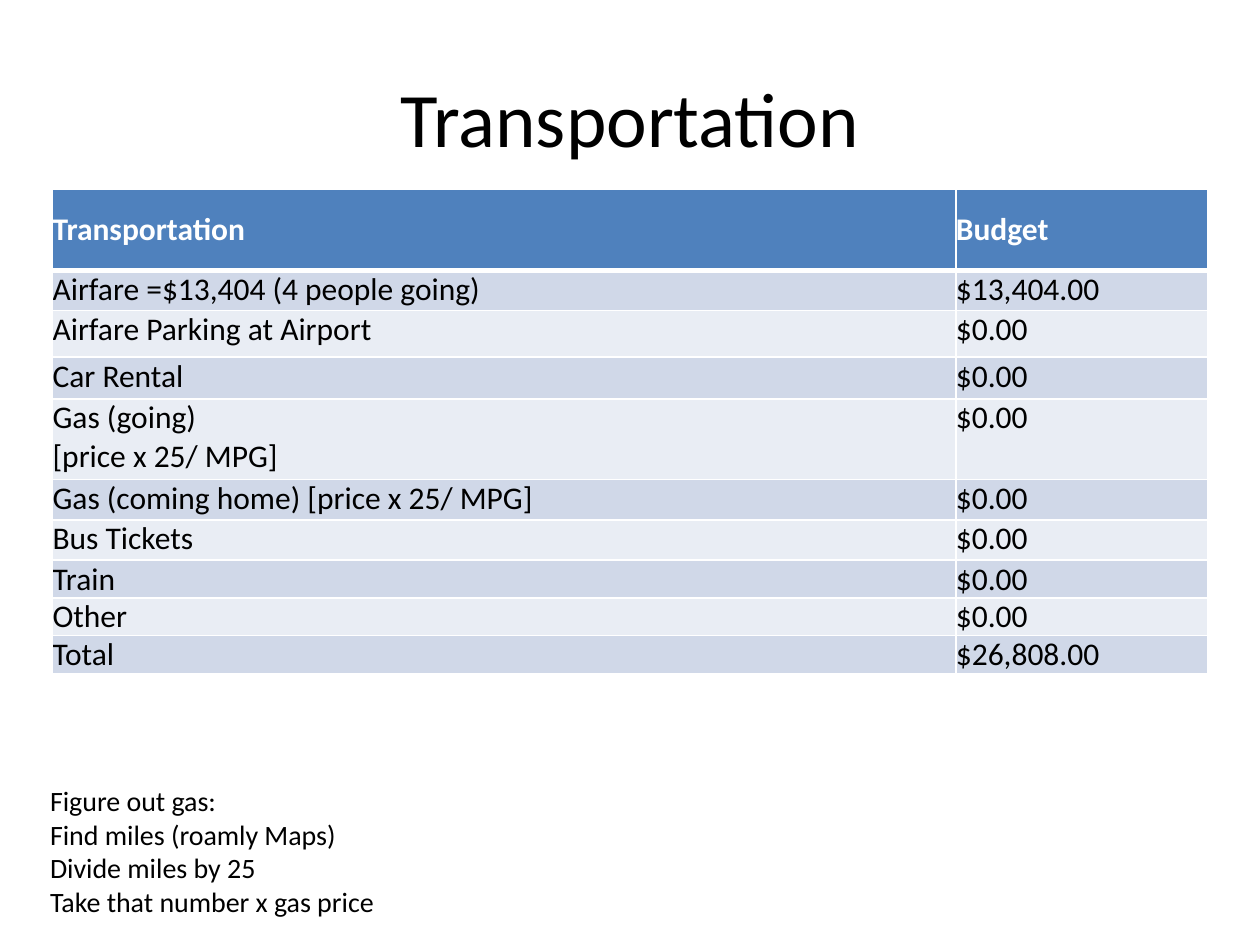
import dataclasses

import lxml.etree
import pptx
import pptx.dml.color
import pptx.enum.text
import pptx.oxml.ns
import pptx.util
from pptx.util import Cm

FONT = "Calibri"
COLORS = {
    "text": "000000",
    "header_text": "FFFFFF",
    "border": "FFFFFF",
    "header": "4F81BD",
    "odd_band": "D0D8E8",
    "even_band": "E9EDF4",
}


@dataclasses.dataclass
class BudgetRow:
    label: str
    amount: str
    height: float  # centimetres


@dataclasses.dataclass
class TextBlock:
    text: str
    left: float  # all lengths in centimetres
    top: float
    width: float
    height: float
    size: int
    centered: bool = False
    wrap: bool = True


BUDGET_ROWS = [
    BudgetRow("Transportation", "Budget", 1.63),
    BudgetRow("Airfare =$13,404 (4 people going)", "$13,404.00", 0.81),
    BudgetRow("Airfare Parking at Airport", "$0.00", 0.94),
    BudgetRow("Car Rental", "$0.00", 0.84),
    BudgetRow("Gas (going)\n[price x 25/ MPG]", "$0.00", 1.63),
    BudgetRow("Gas (coming home) [price x 25/ MPG]", "$0.00", 0.81),
    BudgetRow("Bus Tickets", "$0.00", 0.81),
    BudgetRow("Train", "$0.00", 0.56),
    BudgetRow("Other", "$0.00", 0.56),
    BudgetRow("Total", "$26,808.00", 0.56),
]
COLUMN_WIDTHS = (18.21, 5.08)

TITLE = TextBlock("Transportation", 1.27, 0.76, 22.86, 3.18, 44, centered=True)
GAS_NOTE = TextBlock(
    "Figure out gas:\nFind miles (roamly Maps)\n"
    "Divide miles by 25\nTake that number x gas price",
    0.76, 15.67, 7.11, 3, 16, wrap=False,
)


def rgb(name: str) -> pptx.dml.color.RGBColor:
    return pptx.dml.color.RGBColor.from_string(COLORS[name])


def write_text(frame, text: str, size: int, color: str = "text", bold: bool = False) -> None:
    """Write one paragraph per line of text, all in the same font."""
    frame.text = text
    for paragraph in frame.paragraphs:
        paragraph.font.name = FONT
        paragraph.font.size = pptx.util.Pt(size)
        paragraph.font.bold = bold
        paragraph.font.color.rgb = rgb(color)


def add_text_block(page, block: TextBlock) -> None:
    box = page.shapes.add_textbox(
        Cm(block.left), Cm(block.top), Cm(block.width), Cm(block.height)
    )
    frame = box.text_frame
    frame.word_wrap = block.wrap
    write_text(frame, block.text, block.size)
    if block.centered:
        frame.vertical_anchor = pptx.enum.text.MSO_ANCHOR.MIDDLE
        for paragraph in frame.paragraphs:
            paragraph.alignment = pptx.enum.text.PP_ALIGN.CENTER
    else:
        frame.auto_size = pptx.enum.text.MSO_AUTO_SIZE.SHAPE_TO_FIT_TEXT


def set_borders(cell, top: int, bottom: int) -> None:
    """Draw cell borders; widths are in points, the sides are 1 pt."""
    properties = cell._tc.get_or_add_tcPr()
    qn = pptx.oxml.ns.qn
    for side, width in (("L", 1), ("R", 1), ("T", top), ("B", bottom)):
        line = lxml.etree.SubElement(
            properties, qn(f"a:ln{side}"), w=str(pptx.util.Pt(width))
        )
        fill = lxml.etree.SubElement(line, qn("a:solidFill"))
        lxml.etree.SubElement(fill, qn("a:srgbClr"), val=COLORS["border"])


def add_budget_table(page, left: float, top: float) -> None:
    table = page.shapes.add_table(
        len(BUDGET_ROWS), len(COLUMN_WIDTHS), Cm(left), Cm(top),
        Cm(sum(COLUMN_WIDTHS)), Cm(sum(row.height for row in BUDGET_ROWS)),
    ).table
    for column, width in zip(table.columns, COLUMN_WIDTHS):
        column.width = Cm(width)

    for index, row in enumerate(BUDGET_ROWS):
        table.rows[index].height = Cm(row.height)
        is_header = index == 0
        band = "header" if is_header else "odd_band" if index % 2 else "even_band"
        for cell, text in zip(table.rows[index].cells, (row.label, row.amount)):
            cell.margin_left = cell.margin_right = 0
            cell.margin_top = cell.margin_bottom = 0
            if is_header:
                cell.vertical_anchor = pptx.enum.text.MSO_ANCHOR.MIDDLE
            set_borders(cell, top=3 if index == 1 else 1, bottom=3 if is_header else 1)
            cell.fill.solid()
            cell.fill.fore_color.rgb = rgb(band)
            color = "header_text" if is_header else "text"
            write_text(cell.text_frame, text, 18, color, bold=is_header)


def main() -> None:
    deck = pptx.Presentation()
    deck.slide_width, deck.slide_height = Cm(25.4), Cm(19.05)
    page = deck.slides.add_slide(deck.slide_layouts[6])

    # Title, budget table, and the note on working out gas
    add_text_block(page, TITLE)
    add_budget_table(page, left=1.06, top=3.82)
    add_text_block(page, GAS_NOTE)

    deck.save("out.pptx")


if __name__ == "__main__":
    main()
